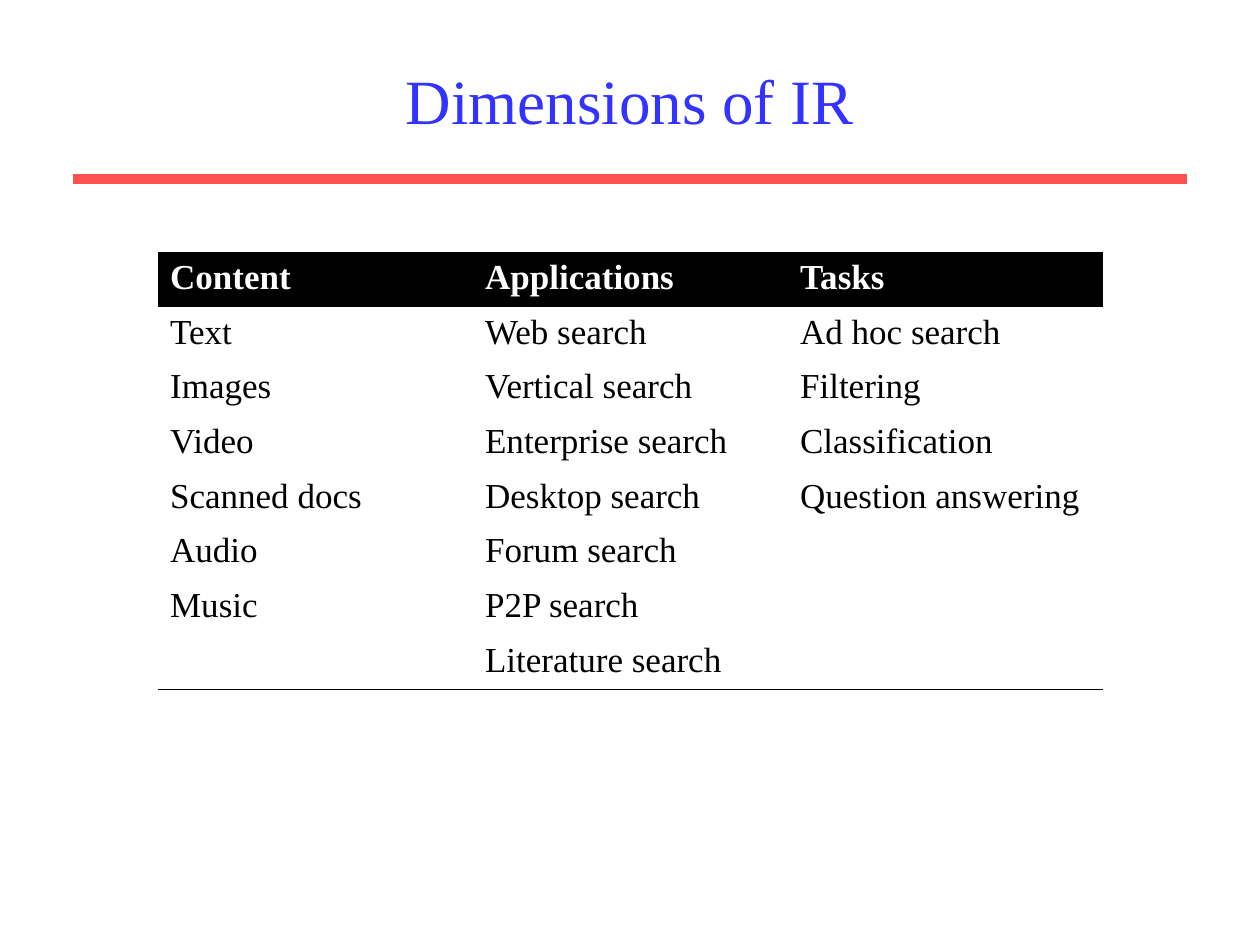
import pptx
import pptx.dml.color
import pptx.enum.shapes
import pptx.enum.text
import pptx.oxml.ns
import pptx.util
from lxml import etree

Inches = pptx.util.Inches

TITLE = "Dimensions of IR"
COLUMNS = {
    "Content": ["Text", "Images", "Video", "Scanned docs", "Audio", "Music"],
    "Applications": ["Web search", "Vertical search", "Enterprise search", "Desktop search",
                     "Forum search", "P2P search", "Literature search"],
    "Tasks": ["Ad hoc search", "Filtering", "Classification", "Question answering"],
}
THEME = {
    "font": "Times New Roman",
    "title": "3333FF", "rule": "FF5050", "ink": "000000", "paper": "FFFFFF",
    "title_size": 36, "cell_size": 20, "rule_width": 6, "border_width": 1,
}
COL_WIDTH, ROW_HEIGHT = 2.5, 0.42


def rgb(name):
    return pptx.dml.color.RGBColor.from_string(THEME[name])


def style_runs(p, size, color, bold=False):
    for r in p.runs:
        r.font.name = THEME["font"]
        r.font.size = pptx.util.Pt(THEME[size])
        r.font.color.rgb = rgb(color)
        r.font.bold = bold


def set_borders(cell, bottom):
    tc_pr = cell._tc.get_or_add_tcPr()
    qn = pptx.oxml.ns.qn
    for side in "LRTB":
        ln = etree.SubElement(tc_pr, qn(f"a:ln{side}"))
        if side == "B" and bottom:
            ln.set("w", str(pptx.util.Pt(THEME["border_width"])))
            fill = etree.SubElement(ln, qn("a:solidFill"))
            etree.SubElement(fill, qn("a:srgbClr"), val=THEME["ink"])
        else:
            etree.SubElement(ln, qn("a:noFill"))


def add_rule(s):
    line = s.shapes.add_connector(pptx.enum.shapes.MSO_CONNECTOR.STRAIGHT,
                                  Inches(0.58), Inches(1.42), Inches(9.42), Inches(1.42))
    line.line.color.rgb = rgb("rule")
    line.line.width = pptx.util.Pt(THEME["rule_width"])
    etree.SubElement(line._element.spPr, pptx.oxml.ns.qn("a:effectLst"))


def add_title(s):
    sp = s.shapes.add_textbox(Inches(0.75), Inches(0.25), Inches(8.5), Inches(1.08))
    tf = sp.text_frame
    tf.word_wrap = True
    tf.vertical_anchor = pptx.enum.text.MSO_ANCHOR.MIDDLE
    tf.text = TITLE
    p = tf.paragraphs[0]
    p.alignment = pptx.enum.text.PP_ALIGN.CENTER
    style_runs(p, "title_size", "title")


def add_dimensions_table(s):
    n_rows = 1 + max(len(items) for items in COLUMNS.values())
    table = s.shapes.add_table(n_rows, len(COLUMNS), Inches(1.25), Inches(2),
                               Inches(COL_WIDTH * len(COLUMNS)),
                               Inches(ROW_HEIGHT * n_rows)).table
    table.horz_banding = False
    for row in table.rows:
        row.height = Inches(ROW_HEIGHT)
    for j, (heading, items) in enumerate(COLUMNS.items()):
        table.columns[j].width = Inches(COL_WIDTH)
        texts = [heading] + items
        for i in range(n_rows):
            cell = table.cell(i, j)
            header = i == 0
            set_borders(cell, bottom=i == n_rows - 1)
            if header:
                cell.fill.solid()
                cell.fill.fore_color.rgb = rgb("ink")
            else:
                cell.fill.background()
            if i < len(texts):
                cell.text_frame.text = texts[i]
                style_runs(cell.text_frame.paragraphs[0], "cell_size",
                           "paper" if header else "ink", header)


def main():
    prs = pptx.Presentation()
    prs.slide_width, prs.slide_height = Inches(10), Inches(7.5)
    s = prs.slides.add_slide(prs.slide_layouts[6])
    add_rule(s)
    add_title(s)
    add_dimensions_table(s)
    prs.save("out.pptx")


if __name__ == "__main__":
    main()
